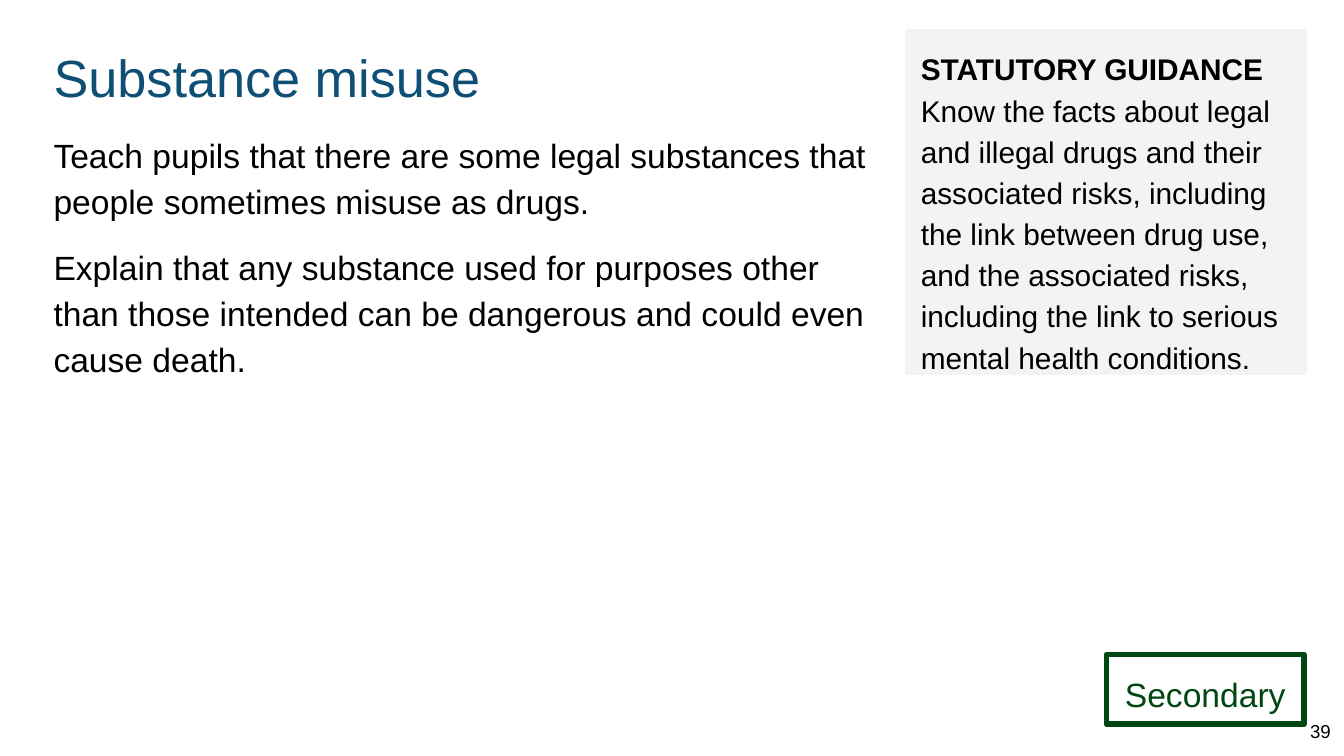
from lxml.etree import SubElement
from pptx import Presentation
from pptx.dml.color import RGBColor
from pptx.enum.shapes import MSO_SHAPE
from pptx.enum.text import MSO_ANCHOR, PP_ALIGN
from pptx.oxml.ns import qn
from pptx.util import Pt

# Content: each paragraph is a list of lines
TITLE = [["Substance misuse"]]
BODY = [
    ["Teach pupils that there are some legal substances that people "
     "sometimes misuse as drugs."],
    ["Explain that any substance used for purposes other than those intended "
     "can be dangerous and could even cause death."],
]
GUIDE = [[
    "STATUTORY GUIDANCE",
    "Know the facts about legal and illegal drugs and their associated risks, "
    "including the link between drug use, and the associated risks, including "
    "the link to serious mental health conditions.",
]]
PHASE = [["Secondary"]]
NUMBER = [["39"]]

THEME = {
    "font": "Arial",
    "ink": "000000", "blue": "104F75", "green": "004712", "grey": "F3F3F3",
    "title": 28, "body": 18, "guide": 16, "number": 10,
    "inset": 7.2, "line": 3, "gap": 10, "spacing": 1.15,
}

# Layout in points
WIDTH, HEIGHT = 720, 405
LEFT, TOP, RIGHT = 21.6, 17.3, 698.6
GUIDE_W, PHASE_W = 212.4, 105.8
NUM_W, NUM_H = 28.1, 26.3


def color(name):
    return RGBColor.from_string(THEME[name])


def write(shape, paras, size, ink="ink", lead=False, **form):
    """Fill a shape with text; lead makes the first line bold."""
    frame = shape.text_frame
    style = {"word_wrap": True, "vertical_anchor": form.pop("anchor", MSO_ANCHOR.TOP)}
    for side in ("left", "right", "top", "bottom"):
        style["margin_" + side] = Pt(THEME["inset"])
    for key, value in style.items():
        setattr(frame, key, value)
    for i, lines in enumerate(paras):
        para = frame.add_paragraph() if i else frame.paragraphs[0]
        look = {"alignment": PP_ALIGN.LEFT, "space_before": Pt(THEME["gap"] if i else 0)}
        for key, value in (look | form).items():
            setattr(para, key, value)
        for j, text in enumerate(lines):
            if j:
                para.add_line_break()
            run = para.add_run()
            run.text = text
            font = {"name": THEME["font"], "size": Pt(THEME[size]), "bold": lead and j == 0}
            for key, value in font.items():
                setattr(run.font, key, value)
            run.font.color.rgb = color(ink)


def label(slide, box, *args, **form):
    write(slide.shapes.add_textbox(*map(Pt, box)), *args, **form)


def panel(slide, box, edge, fill=None):
    """Add a rectangle with a rounded outline join."""
    shape = slide.shapes.add_shape(MSO_SHAPE.RECTANGLE, *map(Pt, box))
    shape.shadow.inherit = False
    if fill:
        shape.fill.solid()
        shape.fill.fore_color.rgb = color(fill)
    else:
        shape.fill.background()
    shape.line.color.rgb = color(edge)
    shape.line.width = Pt(THEME["line"])
    SubElement(shape._element.spPr.find(qn("a:ln")), qn("a:round"))
    return shape


def main():
    deck = Presentation()
    deck.slide_width, deck.slide_height = Pt(WIDTH), Pt(HEIGHT)
    slide = deck.slides.add_slide(deck.slide_layouts[6])
    space = THEME["spacing"]

    # Title and main text
    label(slide, (LEFT, TOP, 461.5, 45.4), TITLE, "title", "blue")
    label(slide, (LEFT, 61.9, 455, 288.7), BODY, "body", line_spacing=space)

    # Slide number in the bottom right corner
    label(slide, (WIDTH - NUM_W, HEIGHT - NUM_H, NUM_W, NUM_H), NUMBER, "number",
          anchor=MSO_ANCHOR.MIDDLE, alignment=PP_ALIGN.RIGHT)

    # Phase tag and guidance panel share a right edge
    tag = panel(slide, (RIGHT - PHASE_W, 350.6, PHASE_W, 37.4), "green")
    write(tag, PHASE, "body", "green", alignment=PP_ALIGN.CENTER, line_spacing=space)
    note = panel(slide, (RIGHT - GUIDE_W, TOP, GUIDE_W, 182.2), "grey", "grey")
    write(note, GUIDE, "guide", lead=True, line_spacing=space)

    deck.save("out.pptx")


if __name__ == "__main__":
    main()
